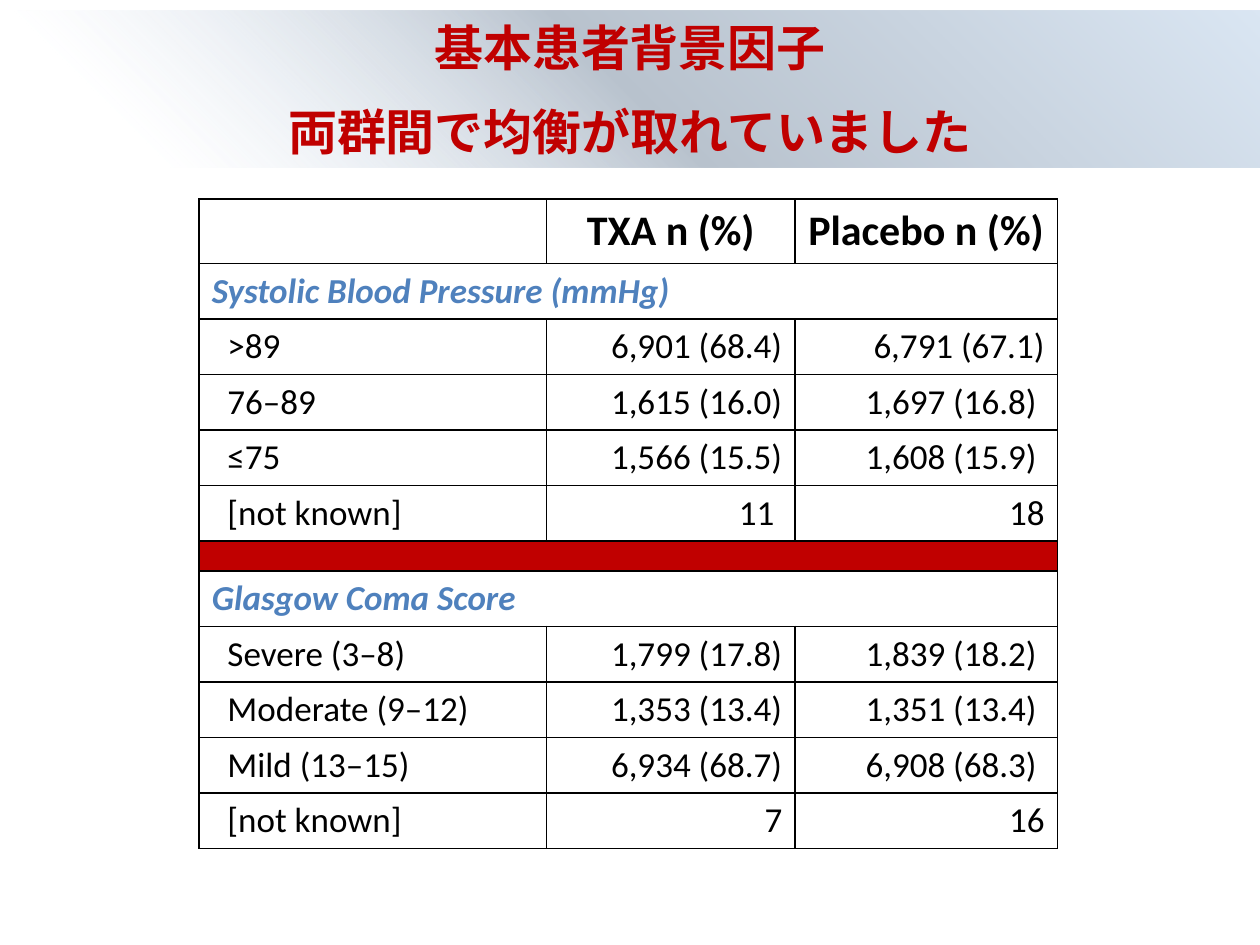
from lxml.etree import SubElement
from pptx import Presentation
from pptx.dml.color import RGBColor
from pptx.enum.shapes import MSO_SHAPE
from pptx.enum.text import MSO_ANCHOR, PP_ALIGN
from pptx.oxml.ns import qn
from pptx.util import Pt

COLORS = {"red": "C00000", "blue": "4F81BD", "black": "000000", "white": "FFFFFF"}
# position in %, colour, opacity in %
BANNER_STOPS = [(12, "DCE6F2", 0), (50, "B8C2CD", 100), (100, "DAE6F3", 100)]
TITLE = ["基本患者背景因子", "両群間で均衡が取れていました"]

HEADER = ["", "TXA n (%)", "Placebo n (%)"]
PRESSURE = [
    ["Systolic Blood Pressure (mmHg)"],
    [">89", "6,901 (68.4)", "6,791 (67.1)"],
    ["76–89", "1,615 (16.0)", "1,697 (16.8) "],
    ["≤75", "1,566 (15.5)", "1,608 (15.9) "],
    ["[not known]", "11 ", "18"],
]
COMA = [
    ["Glasgow Coma Score"],
    ["Severe (3–8)", "1,799 (17.8)", "1,839 (18.2) "],
    ["Moderate (9–12)", "1,353 (13.4)", "1,351 (13.4) "],
    ["Mild (13–15)", "6,934 (68.7)", "6,908 (68.3) "],
    ["[not known]", "7", "16"],
]
DIVIDER = [""]
ROWS = [HEADER, *PRESSURE, DIVIDER, *COMA]
COL_WIDTHS = [198.6, 141.8, 150]
HEADER_H, ROW_H, DIVIDER_H = 36.7, 28.8, 17.2
INDENT = 9


def rgb(name):
    return RGBColor.from_string(COLORS[name])


def add_run(p, text, size, font, color, bold=False, italic=False):
    r = p.add_run()
    r.text = text
    f = r.font
    f.size, f.name, f.bold, f.italic = Pt(size), font, bold, italic
    f.color.rgb = rgb(color)


def fill_gradient(s, stops, angle):
    s.fill.gradient()
    grad = s._element.spPr.find(qn("a:gradFill"))
    gs_list = grad.find(qn("a:gsLst"))
    for gs in list(gs_list):
        gs_list.remove(gs)
    for pos, color, opacity in stops:
        gs = SubElement(gs_list, qn("a:gs"), pos=str(pos * 1000))
        clr = SubElement(gs, qn("a:srgbClr"), val=color)
        if opacity < 100:
            SubElement(clr, qn("a:alpha"), val=str(opacity * 1000))
    grad.find(qn("a:lin")).set("ang", str(angle * 60000))


def add_banner(slide, x, y, w, h):
    s = slide.shapes.add_shape(MSO_SHAPE.RECTANGLE, Pt(x), Pt(y), Pt(w), Pt(h))
    s.shadow.inherit = False
    s.line.fill.background()
    fill_gradient(s, BANNER_STOPS, 315)
    tf = s.text_frame
    tf.word_wrap = True
    tf.vertical_anchor = MSO_ANCHOR.MIDDLE
    for i, line in enumerate(TITLE):
        p = tf.add_paragraph() if i else tf.paragraphs[0]
        p.alignment = PP_ALIGN.CENTER
        p.space_before = Pt(14)
        add_run(p, line, 28, "Arial", "red", bold=True)


def style_cell(cell, fill):
    """Set the fill and a thin black border on all four sides."""
    tc_pr = cell._tc.get_or_add_tcPr()
    for side in ("a:lnL", "a:lnR", "a:lnT", "a:lnB"):
        ln = SubElement(tc_pr, qn(side), w=str(Pt(1)))
        solid = SubElement(ln, qn("a:solidFill"))
        SubElement(solid, qn("a:srgbClr"), val=COLORS["black"])
    cell.fill.solid()
    cell.fill.fore_color.rgb = rgb(fill)


def write_cell(cell, text, col, row):
    p = cell.text_frame.paragraphs[0]
    if row is HEADER:
        p.alignment = PP_ALIGN.CENTER
        if text:
            add_run(p, text, 24, "Calibri", "black", bold=True)
    elif len(row) == 1:
        add_run(p, text, 20, "Calibri", "blue", bold=True, italic=True)
    else:
        if col:
            p.alignment = PP_ALIGN.RIGHT
        else:
            cell.margin_left = Pt(7.2 + INDENT)
        add_run(p, text, 20, "Calibri", "black")


def add_baseline_table(slide, x, y):
    heights = [HEADER_H if row is HEADER else DIVIDER_H if row is DIVIDER else ROW_H
               for row in ROWS]
    frame = slide.shapes.add_table(len(ROWS), len(COL_WIDTHS), Pt(x), Pt(y),
                                   Pt(sum(COL_WIDTHS)), Pt(sum(heights)))
    table = frame.table
    table.first_row = table.horz_banding = False
    for column, width in zip(table.columns, COL_WIDTHS):
        column.width = Pt(width)
    for i, (row, height) in enumerate(zip(ROWS, heights)):
        table.rows[i].height = Pt(height)
        cells = [table.cell(i, c) for c in range(len(COL_WIDTHS))]
        for cell in cells:
            style_cell(cell, "red" if row is DIVIDER else "white")
            if row is DIVIDER:
                p = cell.text_frame.paragraphs[0]
                SubElement(p._p, qn("a:endParaRPr"), sz="800")
            elif i > ROWS.index(DIVIDER):
                cell.vertical_anchor = MSO_ANCHOR.MIDDLE
        if len(row) == 1:
            cells[0].merge(cells[-1])
        if row is not DIVIDER:
            for c, text in enumerate(row):
                write_cell(cells[c], text, c, row)


def main():
    prs = Presentation()
    prs.slide_width, prs.slide_height = Pt(720), Pt(540)
    slide = prs.slides.add_slide(prs.slide_layouts[6])
    add_baseline_table(slide, 113.8, 113.8)
    add_banner(slide, 0, 5.8, 720, 90)
    prs.save("out.pptx")


if __name__ == "__main__":
    main()
